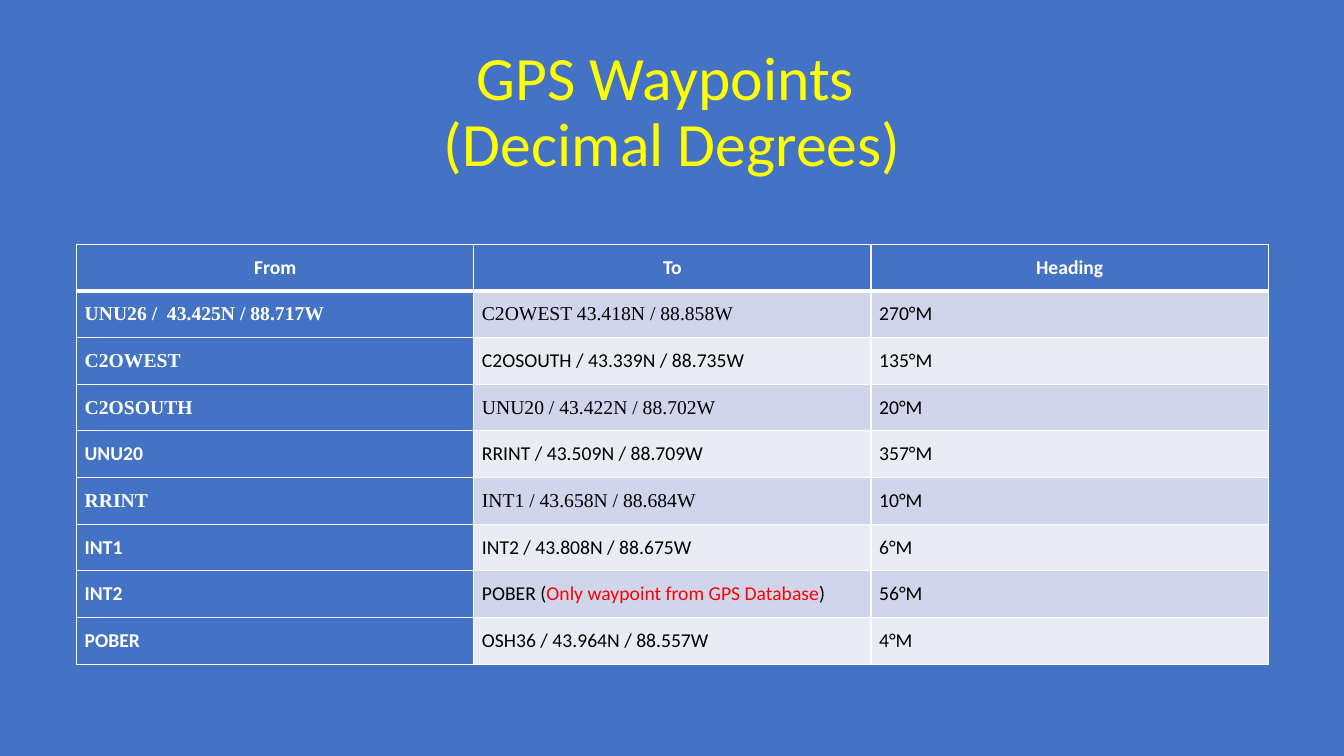
from lxml.etree import SubElement
from pptx import Presentation
from pptx.dml.color import RGBColor
from pptx.enum.text import MSO_ANCHOR, PP_ALIGN
from pptx.oxml.ns import qn
from pptx.util import Inches, Pt

MIDDLE = MSO_ANCHOR.MIDDLE
LEFT, CENTER = PP_ALIGN.LEFT, PP_ALIGN.CENTER
SANS, SERIF = "Calibri", "Times New Roman"
COLORS = {"blue": "4472C4", "yellow": "FFFF00", "white": "FFFFFF",
          "black": "000000", "red": "FF0000", "dark": "CFD5EA", "pale": "E9EBF5"}
HEADS = ["From", "To", "Heading"]
# Each leg: number of leading cells set in serif, then its texts; bars enclose red words
LEGS = [
    (2, "UNU26 /  43.425N / 88.717W", "C2OWEST 43.418N / 88.858W", "270°M"),
    (1, "C2OWEST", "C2OSOUTH / 43.339N / 88.735W", "135°M"),
    (2, "C2OSOUTH", "UNU20 / 43.422N / 88.702W", "20°M"),
    (0, "UNU20", "RRINT / 43.509N / 88.709W", "357°M"),
    (2, "RRINT", "INT1 / 43.658N / 88.684W", "10°M"),
    (0, "INT1", "INT2 / 43.808N / 88.675W", "6°M"),
    (0, "INT2", "POBER (|Only waypoint from GPS Database|)", "56°M"),
    (0, "POBER", "OSH36 / 43.964N / 88.557W", "4°M"),
]


class Deck:
    def __init__(self):
        self.prs = Presentation()
        self.prs.slide_width, self.prs.slide_height = Inches(13.33), Inches(7.5)
        self.slide = self.prs.slides.add_slide(self.prs.slide_layouts[6])
        self.paint(self.slide.background.fill, "blue")

    def paint(self, fill, color):
        fill.solid()
        fill.fore_color.rgb = RGBColor.from_string(COLORS[color])

    def place(self, *box):
        """Turn left, top, width and height in percent of the slide into lengths."""
        sizes = (self.prs.slide_width, self.prs.slide_height) * 2
        return [int(size * share / 100) for size, share in zip(sizes, box)]

    def text(self, para, words, color, align, **form):
        para.alignment = align
        for i, part in enumerate(words.split("|")):
            run = para.add_run()
            run.text = part
            for name, value in form.items():
                setattr(run.font, name, value)
            self.paint(run.font.fill, "red" if i % 2 else color)

    def title(self, lines, *box):
        frame = self.slide.shapes.add_textbox(*self.place(*box)).text_frame
        frame.word_wrap, frame.vertical_anchor = True, MIDDLE
        para = frame.paragraphs[0]
        para.line_spacing = 0.9
        for i, line in enumerate(lines):
            if i:
                para.add_line_break()
            self.text(para, line, "yellow", CENTER, name=SANS, size=Pt(44))

    def edge(self, cell, **widths):
        props = cell._tc.get_or_add_tcPr()
        for side in "LRTB":
            line = SubElement(props, qn("a:ln" + side), w=str(Pt(widths.get(side, 1))))
            fill = SubElement(line, qn("a:solidFill"))
            SubElement(fill, qn("a:srgbClr"), val=COLORS["white"])

    def table(self, heads, legs, *box):
        rows = [(0, *heads), *legs]
        grid = self.slide.shapes.add_table(len(rows), len(heads), *self.place(*box)).table
        grid.first_col = True
        form = {"vertical_anchor": MIDDLE}
        for side in ("left", "right", "top", "bottom"):
            form["margin_" + side] = Inches(0.08)
        for r, (serif, *texts) in enumerate(rows):
            for c, words in enumerate(texts):
                cell = grid.cell(r, c)
                lead = r == 0 or c == 0
                for name, value in form.items():
                    setattr(cell, name, value)
                self.edge(cell, T=3 if r == 1 else 1, B=3 if r == 0 else 1)
                self.paint(cell.fill, "blue" if lead else "dark" if r % 2 else "pale")
                self.text(cell.text_frame.paragraphs[0], words,
                          "white" if lead else "black", LEFT if r else CENTER,
                          name=SERIF if c < serif else SANS, size=Pt(14), bold=lead)


def main():
    deck = Deck()
    deck.title(["GPS Waypoints ", "(Decimal Degrees)"], 6.9, 5.33, 86.27, 19.33)
    deck.table(HEADS, LEGS, 5.7, 32.3, 88.67, 55.6)
    deck.prs.save("out.pptx")


if __name__ == "__main__":
    main()
